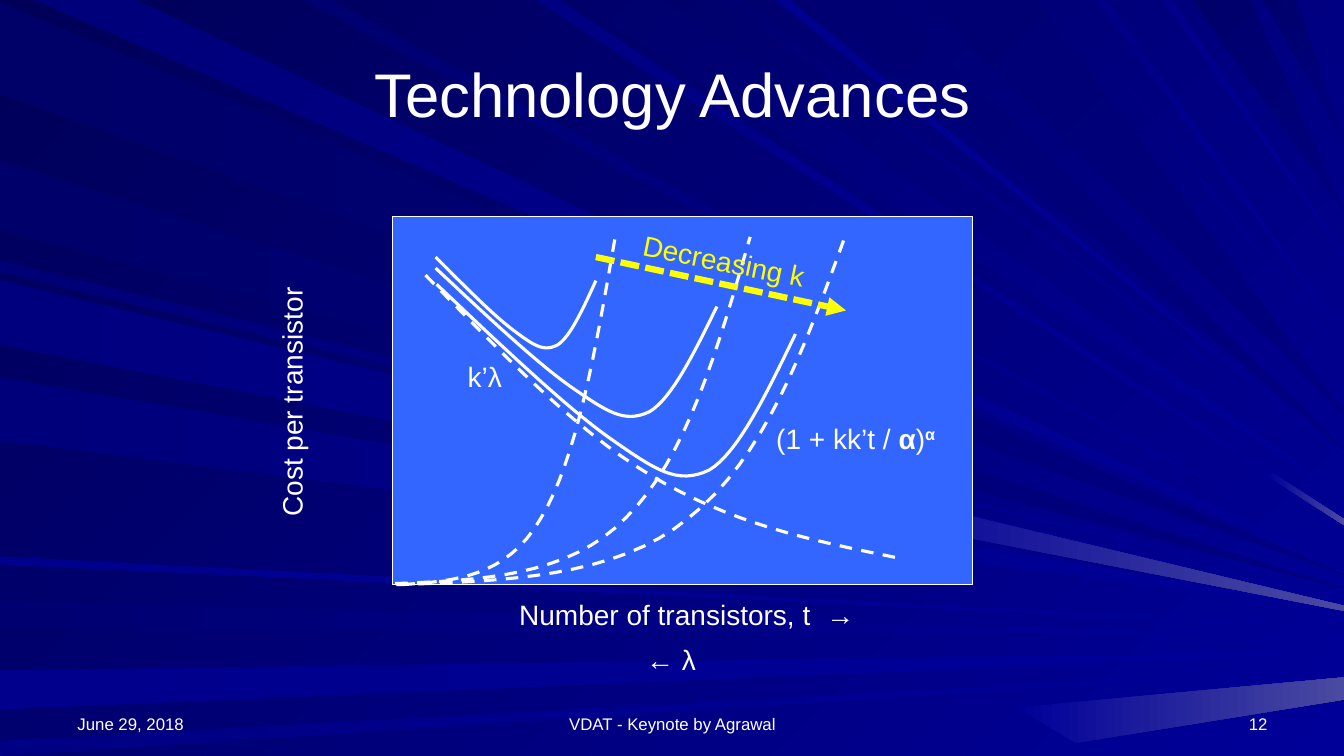
import pptx
import pptx.util
import pptx.dml.color
import pptx.enum.dml
import pptx.enum.shapes
import pptx.enum.text
import pptx.oxml.ns
import lxml.etree

Inches = pptx.util.Inches
ALIGN = pptx.enum.text.PP_ALIGN
ANCHOR = pptx.enum.text.MSO_ANCHOR
DASH = pptx.enum.dml.MSO_LINE.DASH
DOTS = pptx.enum.dml.MSO_LINE.SQUARE_DOT

THEME = {
    "font": "Arial", "text": "FFFFFF", "accent": "FFFF00", "panel": "3366FF",
    "dark": "000058", "navy": "000080", "light": "000099", "glint": "4A4AA1",
    "title": 44, "label": 20, "footer": 12,
    "frame": 0.75, "curve": 2.25, "arrow": 4.5,
}
WIDTH, HEIGHT = 13.33, 7.5

LEFT_RAYS = [
    (0.02, 0.93, 5.7, "000069", "navy"),
    (5.96, 6.23, 6.31, "000071", "light"),
    (6.65, 7.04, 6.47, "00008C", "light"),
    (7.35, 7.5, 6.62, "000085", "light"),
    (2.58, 2.7, 5.89, "000076", "light"),
    (1.59, 2.28, 5.84, "00006B", "navy"),
    (2.78, 3.42, 6, "00007E", "light"),
    (3.74, 4.37, 6.05, "00007B", "light"),
    (5.52, 5.6, 6.22, "00008E", "light"),
]
TOP_RAYS = [
    (0.34, 1.35, 5.63, "00007B", "light"),
    (5.31, 5.55, 5.18, "000083", "light"),
    (5.68, 6.57, 4.93, "00006D", "light"),
    (7.2, 7.36, 4.63, "000073", "light"),
    (8.07, 8.81, 4.46, "000073", "navy"),
    (11.82, 12.4, 2.1, "00006B", "navy"),
    (12.53, 12.86, 1.4, "00006D", "navy"),
    (3, 3.29, 5.5, "000070", "light"),
    (7.69, 7.84, 4.54, "00008E", "light"),
    (9.14, 10.27, 4.1, "000073", "navy"),
    (10.46, 10.56, 3.57, "000078", "light"),
    (10.87, 10.99, 3.35, "000085", "light"),
    (11.53, 11.63, 2.53, "00008A", "light"),
]
GLINTS = [
    [(10.08, 7.02), (10.67, 7.37), (WIDTH, 6.94), (WIDTH, 6.72)],
    [(8.5, 4.85), (8.44, 5.11), (WIDTH, 6.06), (WIDTH, 6.01)],
    [(12.62, 4.69), (12.58, 4.73), (WIDTH, 5.21), (WIDTH, 5.15)],
]

PANEL = (3.89, 2.15, 5.76, 3.65)

FALLING = [(0, 0), (0.16, 0.27), (0.31, 0.54), (0.48, 0.71), (0.65, 0.88), (0.82, 0.94), (1, 1)]
RISING = [(0, 1), (0.24, 0.99), (0.49, 0.98), (0.65, 0.81), (0.82, 0.64), (0.91, 0.32), (1, 0)]
COST = [(0, 0), (0.18, 0.32), (0.36, 0.64), (0.48, 0.8), (0.61, 0.97), (0.67, 1.05), (0.76, 0.97),
        (0.84, 0.88), (0.92, 0.57), (1, 0.26)]
CURVES = [
    (FALLING, DASH, (4.22, 2.73, 4.66, 2.8)),
    (RISING, DASH, (3.93, 2.35, 4.45, 3.45)),
    (COST, None, (4.33, 2.82, 3.56, 1.9)),
    (RISING, DASH, (3.92, 2.35, 3.52, 3.44)),
    (RISING, DASH, (3.99, 2.36, 2.11, 3.44)),
    (COST, None, (4.32, 2.66, 2.79, 1.47)),
    (COST, None, (4.32, 2.55, 1.59, 0.9)),
]
TREND_ARROW = (5.91, 2.55, 8.39, 3.08)

HEADINGS = [
    ((0.67, 0.3, 12, 1.25), "Technology Advances",
     {"size": THEME["title"], "align": ALIGN.CENTER, "anchor": ANCHOR.MIDDLE}),
    ((0.67, 6.83, 3.11, 0.5), "June 29, 2018", {"size": THEME["footer"], "anchor": ANCHOR.BOTTOM}),
    ((4.56, 6.83, 4.22, 0.5), "VDAT - Keynote by Agrawal",
     {"size": THEME["footer"], "align": ALIGN.CENTER, "anchor": ANCHOR.BOTTOM}),
    ((9.56, 6.83, 3.11, 0.5), "12", {"size": THEME["footer"], "align": ALIGN.RIGHT, "anchor": ANCHOR.BOTTOM}),
]
LABELS = [
    ((5.05, 5.88, 3.79, 0.44), [("Number of transistors, t", {}), (" ", {"spc": "556"}), ("→", {})],
     {"wrap": True}),
    ((1.65, 3.76, 2.49, 0.44), "Cost per transistor", {"rotation": 270}),
    ((4.54, 3.52, 0.55, 0.44), "k’λ", {}),
    ((7.6, 4.13, 1.85, 0.44),
     [("(1 + kk’t /", {}), (" α", {"b": "1"}), (")", {}), ("α", {"b": "1", "baseline": "30000"})], {}),
    ((6.31, 6.32, 0.7, 0.44), "← λ", {}),
    ((6.27, 2.37, 1.84, 0.44), "Decreasing k", {"rotation": 11.3, "color": THEME["accent"]}),
]


def rgb(value):
    return pptx.dml.color.RGBColor.from_string(value)


def paint(fill, start, end, angle):
    fill.gradient()
    fill.gradient_angle = (360 - angle) % 360
    for stop, color in zip(fill.gradient_stops, (start, end)):
        stop.color.rgb = rgb(color)


def outline(shapes, points, close):
    points = [(Inches(x), Inches(y)) for x, y in points]
    builder = shapes.build_freeform(*points[0])
    builder.add_line_segments(points[1:], close=close)
    shape = builder.convert_to_shape()
    shape.shadow.inherit = False
    return shape


def draw_ray(shapes, points, start, end, angle):
    ray = outline(shapes, points, True)
    paint(ray.fill, start, end, angle)
    ray.line.fill.background()


def draw_backdrop(shapes):
    for top, bottom, tip, start, end in LEFT_RAYS:
        draw_ray(shapes, [(0, top), (0, bottom), (WIDTH, tip)], start, THEME[end], 0)
    for left, right, tip, start, end in TOP_RAYS:
        draw_ray(shapes, [(left, 0), (right, 0), (WIDTH, tip)], start, THEME[end], 45)
    for points in GLINTS:
        draw_ray(shapes, points, THEME["light"], THEME["glint"], 0)


def style_line(line, color, width, dash=None):
    line.color.rgb = rgb(color)
    line.width = pptx.util.Pt(width)
    if dash:
        line.dash_style = dash


def bezier_points(nodes, steps=16):
    points = [nodes[0]]
    for first in range(0, len(nodes) - 1, 3):
        a, b, c, d = nodes[first:first + 4]
        for step in range(1, steps + 1):
            t = step / steps
            weights = ((1 - t) ** 3, 3 * t * (1 - t) ** 2, 3 * t * t * (1 - t), t ** 3)
            points.append(tuple(sum(w * node[axis] for w, node in zip(weights, (a, b, c, d)))
                                for axis in (0, 1)))
    return points


def draw_curve(shapes, nodes, dash, place):
    left, top, width, height = place
    points = [(left + x * width, top + y * height) for x, y in bezier_points(nodes)]
    curve = outline(shapes, points, False)
    curve.fill.background()
    style_line(curve.line, THEME["text"], THEME["curve"], dash)


def add_text(shapes, place, text, size=THEME["label"], color=THEME["text"], align=ALIGN.LEFT,
             anchor=ANCHOR.TOP, wrap=True, grow=False, rotation=0):
    box = shapes.add_textbox(*map(Inches, place))
    box.rotation = rotation
    frame = box.text_frame
    frame.word_wrap = wrap
    frame.vertical_anchor = anchor
    if grow:
        frame.auto_size = pptx.enum.text.MSO_AUTO_SIZE.SHAPE_TO_FIT_TEXT
    para = frame.paragraphs[0]
    para.alignment = align
    for words, attributes in [(text, {})] if isinstance(text, str) else text:
        span = para.add_run()
        span.text = words
        span.font.name = THEME["font"]
        span.font.size = pptx.util.Pt(size)
        span.font.color.rgb = rgb(color)
        for name, value in attributes.items():
            span.font._element.set(name, value)


def add_arrow(shapes, ends):
    arrow = shapes.add_connector(pptx.enum.shapes.MSO_CONNECTOR.STRAIGHT, *map(Inches, ends))
    style_line(arrow.line, THEME["accent"], THEME["arrow"], DOTS)
    head = lxml.etree.SubElement(arrow.line._get_or_add_ln(), pptx.oxml.ns.qn("a:tailEnd"))
    head.set("type", "triangle")
    lxml.etree.SubElement(arrow._element.spPr, pptx.oxml.ns.qn("a:effectLst"))


def main():
    deck = pptx.Presentation()
    deck.slide_width, deck.slide_height = Inches(WIDTH), Inches(HEIGHT)
    page = deck.slides.add_slide(deck.slide_layouts[6])
    shapes = page.shapes
    paint(page.background.fill, THEME["dark"], THEME["light"], 45)
    draw_backdrop(shapes.add_group_shape().shapes)
    for place, text, options in HEADINGS:
        add_text(shapes, place, text, **options)
    panel = shapes.add_shape(pptx.enum.shapes.MSO_SHAPE.RECTANGLE, *map(Inches, PANEL))
    panel.shadow.inherit = False
    panel.fill.solid()
    panel.fill.fore_color.rgb = rgb(THEME["panel"])
    style_line(panel.line, THEME["text"], THEME["frame"])
    for nodes, dash, place in CURVES:
        draw_curve(shapes, nodes, dash, place)
    for place, text, options in LABELS:
        add_text(shapes, place, text, **{"wrap": False, "grow": True, **options})
    add_arrow(shapes, TREND_ARROW)
    deck.save("out.pptx")


if __name__ == "__main__":
    main()
